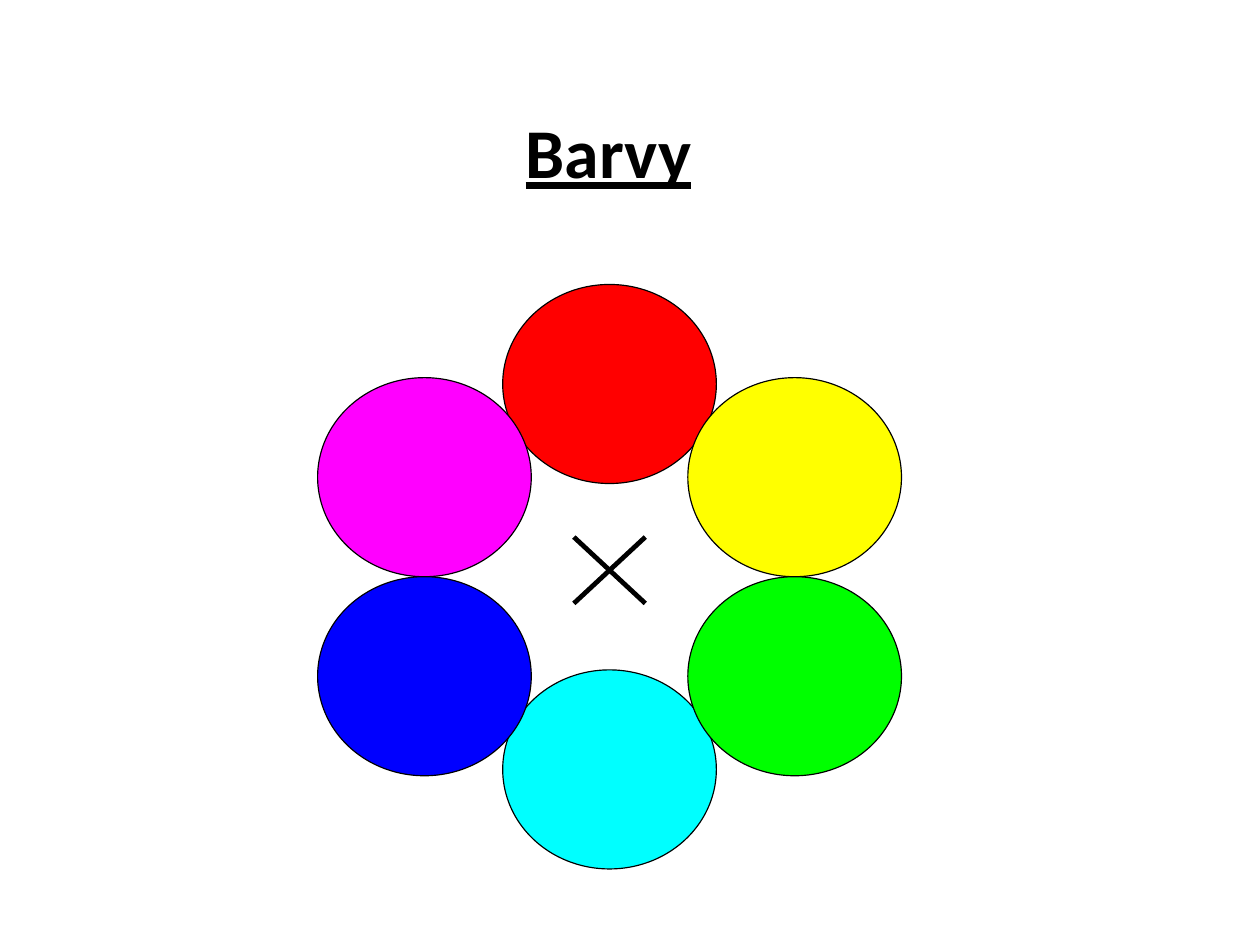
from dataclasses import dataclass

from lxml.etree import SubElement
from pptx import Presentation
from pptx.dml.color import RGBColor
from pptx.enum.shapes import MSO_CONNECTOR as Connector, MSO_SHAPE as Shape
from pptx.enum.text import MSO_ANCHOR as Anchor, PP_ALIGN as Align
from pptx.oxml.ns import qn
from pptx.util import Pt

TITLE = "Barvy"
WHEEL = [
    ("FF0000", 0, -2),
    ("00FFFF", 0, 2),
    ("FFFF00", 1, -1),
    ("FF00FF", -1, -1),
    ("00FF00", 1, 1),
    ("0000FF", -1, 1),
]


@dataclass(frozen=True)
class Theme:
    ink: RGBColor = RGBColor(0, 0, 0)
    font: str = "Calibri"
    title_size: float = 44
    outline: float = 0.75
    cross_line: float = 3


THEME = Theme()
SLIDE_WIDTH, SLIDE_HEIGHT = 793.7, 595.28
TITLE_BOX = (59.3, 50, 648, 90)
CENTER_X, CENTER_Y = 384, 363.3
CIRCLE_WIDTH, CIRCLE_HEIGHT = 134.6, 125.4
COLUMN_STEP = 116.6
ROW_OFFSETS = {1: CIRCLE_HEIGHT / 2, 2: 121.4}
CROSS_Y = 359.2
CROSS_HALF_WIDTH, CROSS_HALF_HEIGHT = 22.5, 20.9


def write_title(page):
    box = page.shapes.title
    box.left, box.top, box.width, box.height = map(Pt, TITLE_BOX)
    frame = box.text_frame
    frame.word_wrap = True
    frame.vertical_anchor = Anchor.MIDDLE
    frame.text = TITLE
    para = frame.paragraphs[0]
    para.alignment = Align.CENTER
    font = para.font
    font.name, font.size = THEME.font, Pt(THEME.title_size)
    font.bold = font.underline = True
    font.color.rgb = THEME.ink


def draw_circle(group, color, column, row):
    x = CENTER_X + column * COLUMN_STEP
    offset = ROW_OFFSETS[abs(row)]
    y = CENTER_Y + (offset if row > 0 else -offset)
    circle = group.shapes.add_shape(
        Shape.OVAL,
        Pt(x - CIRCLE_WIDTH / 2), Pt(y - CIRCLE_HEIGHT / 2),
        Pt(CIRCLE_WIDTH), Pt(CIRCLE_HEIGHT),
    )
    circle.shadow.inherit = False
    circle.fill.solid()
    circle.fill.fore_color.rgb = RGBColor.from_string(color)
    circle.line.color.rgb = THEME.ink
    circle.line.width = Pt(THEME.outline)


def draw_stroke(group, direction):
    reach = direction * CROSS_HALF_WIDTH
    stroke = group.shapes.add_connector(
        Connector.STRAIGHT,
        Pt(CENTER_X - reach), Pt(CROSS_Y - CROSS_HALF_HEIGHT),
        Pt(CENTER_X + reach), Pt(CROSS_Y + CROSS_HALF_HEIGHT),
    )
    stroke.line.color.rgb = THEME.ink
    stroke.line.width = Pt(THEME.cross_line)
    SubElement(stroke._element.spPr, qn("a:effectLst"))


def main():
    deck = Presentation()
    deck.slide_width, deck.slide_height = Pt(SLIDE_WIDTH), Pt(SLIDE_HEIGHT)
    page = deck.slides.add_slide(deck.slide_layouts[5])
    write_title(page)
    group = page.shapes.add_group_shape()
    for color, column, row in WHEEL:
        draw_circle(group, color, column, row)
    for direction in (1, -1):
        draw_stroke(group, direction)
    deck.save("out.pptx")


if __name__ == "__main__":
    main()
